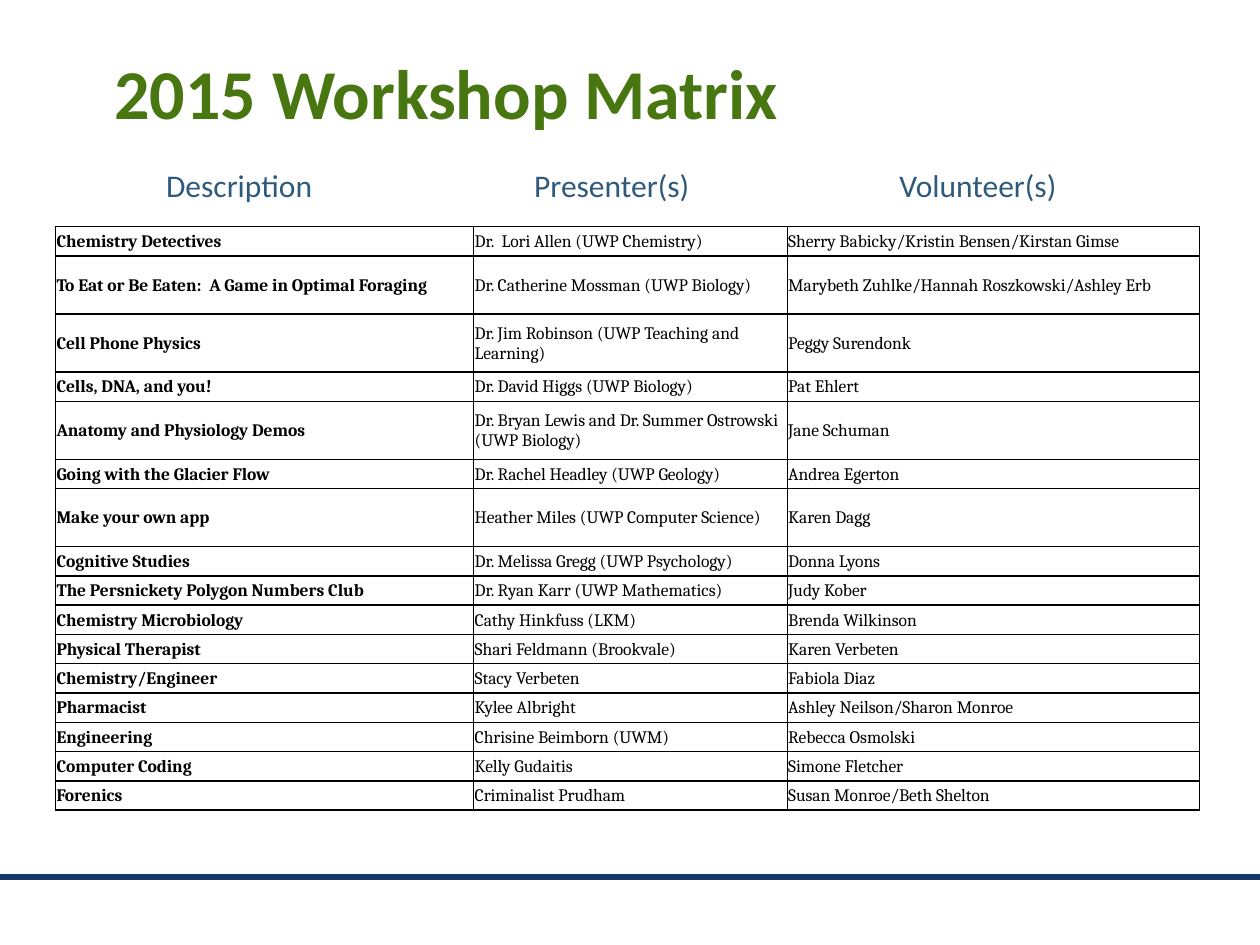
from lxml.etree import SubElement
from pptx import Presentation
from pptx.dml.color import RGBColor
from pptx.enum.shapes import MSO_CONNECTOR
from pptx.enum.text import MSO_ANCHOR, MSO_AUTO_SIZE
from pptx.oxml import parse_xml
from pptx.oxml.ns import nsdecls, qn
from pptx.util import Cm, Pt


def color(value):
    return RGBColor.from_string(value)


def write(frame, text, font_name, size, ink, bold=False):
    frame.text = text
    font = frame.paragraphs[0].runs[0].font
    font.name = font_name
    font.size = Pt(size)
    font.bold = bold
    font.color.rgb = color(ink)


workshops = [
    ("Chemistry Detectives", "Dr.  Lori Allen (UWP Chemistry)", "Sherry Babicky/Kristin Bensen/Kirstan Gimse"),
    ("To Eat or Be Eaten:  A Game in Optimal Foraging", "Dr. Catherine Mossman (UWP Biology)",
     "Marybeth Zuhlke/Hannah Roszkowski/Ashley Erb"),
    ("Cell Phone Physics", "Dr. Jim Robinson (UWP Teaching and Learning)", "Peggy Surendonk"),
    ("Cells, DNA, and you!", "Dr. David Higgs (UWP Biology)", "Pat Ehlert"),
    ("Anatomy and Physiology Demos", "Dr. Bryan Lewis and Dr. Summer Ostrowski (UWP Biology)", "Jane Schuman"),
    ("Going with the Glacier Flow", "Dr. Rachel Headley (UWP Geology)", "Andrea Egerton"),
    ("Make your own app", "Heather Miles (UWP Computer Science)", "Karen Dagg"),
    ("Cognitive Studies", "Dr. Melissa Gregg (UWP Psychology)", "Donna Lyons"),
    ("The Persnickety Polygon Numbers Club", "Dr. Ryan Karr (UWP Mathematics)", "Judy Kober"),
    ("Chemistry Microbiology", "Cathy Hinkfuss (LKM)", "Brenda Wilkinson"),
    ("Physical Therapist", "Shari Feldmann (Brookvale)", "Karen Verbeten"),
    ("Chemistry/Engineer", "Stacy Verbeten", "Fabiola Diaz"),
    ("Pharmacist", "Kylee Albright", "Ashley Neilson/Sharon Monroe"),
    ("Engineering", "Chrisine Beimborn (UWM)", "Rebecca Osmolski"),
    ("Computer Coding", "Kelly Gudaitis", "Simone Fletcher"),
    ("Forenics", "Criminalist Prudham", "Susan Monroe/Beth Shelton"),
]
tall_rows = {1, 2, 4, 6}
column_widths = [8.43, 6.32, 8.31]
row_heights = [1.17 if i in tall_rows else 0.59 for i in range(len(workshops))]

prs = Presentation()
prs.slide_width = Cm(25.4)
prs.slide_height = Cm(19.05)
slide = prs.slides.add_slide(prs.slide_layouts[6])

footer_rule = slide.shapes.add_connector(MSO_CONNECTOR.STRAIGHT, 0, Cm(17.68), prs.slide_width, Cm(17.68))
footer_rule.line.color.rgb = color("133869")
footer_rule.line.width = Pt(3)
SubElement(footer_rule._element.spPr, qn("a:effectLst"))

title = slide.shapes.add_textbox(Cm(2.06), Cm(0.84), Cm(21.41), Cm(2.03)).text_frame
title.word_wrap = True
title.vertical_anchor = MSO_ANCHOR.MIDDLE
write(title, "2015 Workshop Matrix", "Calibri", 40, "487711", bold=True)

matrix = slide.shapes.add_table(
    len(workshops), len(column_widths), Cm(1.12), Cm(4.57), Cm(sum(column_widths)), Cm(sum(row_heights))
).table
matrix.first_row = False
matrix.horz_banding = False
for column, width in zip(matrix.columns, column_widths):
    column.width = Cm(width)
for row, height, workshop in zip(matrix.rows, row_heights, workshops):
    row.height = Cm(height)
    for position, (cell, entry) in enumerate(zip(row.cells, workshop)):
        cell.margin_left = cell.margin_right = cell.margin_top = Cm(0.02)
        cell.margin_bottom = 0
        cell.vertical_anchor = MSO_ANCHOR.MIDDLE
        write(cell.text_frame, entry, "Cambria", 10, "000000", bold=position == 0)
        for side in ("lnL", "lnR", "lnT", "lnB"):
            cell._tc.get_or_add_tcPr().append(parse_xml(
                f'<a:{side} {nsdecls("a")} w="12700"><a:solidFill><a:srgbClr val="000000"/></a:solidFill></a:{side}>'
            ))
        cell.fill.background()

for heading, left, width in [
    ("Description", 3.1, 3.48),
    ("Presenter(s)", 10.52, 3.68),
    ("Volunteer(s)", 17.88, 3.76),
]:
    label = slide.shapes.add_textbox(Cm(left), Cm(3.23), Cm(width), Cm(1.02)).text_frame
    label.word_wrap = False
    label.auto_size = MSO_AUTO_SIZE.SHAPE_TO_FIT_TEXT
    write(label, heading, "Calibri", 18, "2E5A7C")

prs.save("out.pptx")
